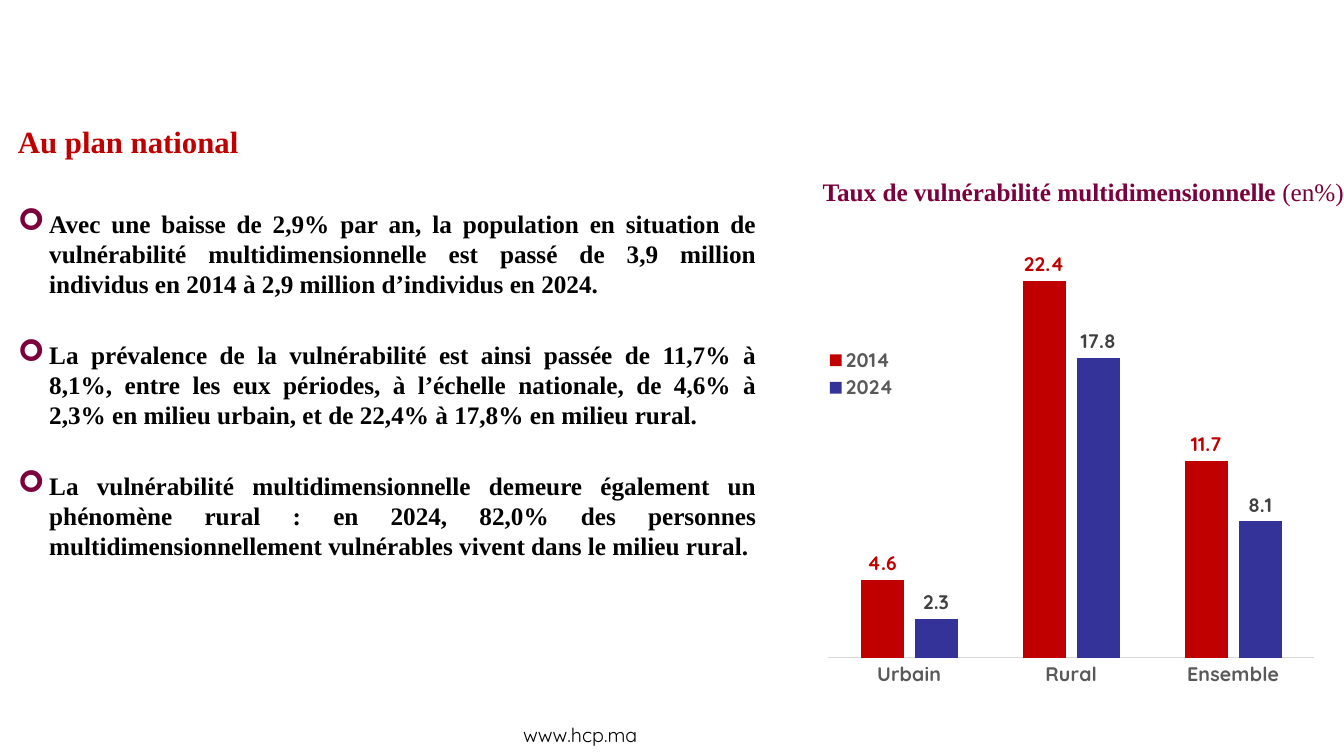
from dataclasses import dataclass

from lxml import etree
from pptx import Presentation
from pptx.chart.data import CategoryChartData
from pptx.dml.color import RGBColor
from pptx.enum.chart import XL_CHART_TYPE, XL_LABEL_POSITION, XL_LEGEND_POSITION, XL_TICK_MARK
from pptx.enum.text import MSO_ANCHOR, PP_ALIGN
from pptx.oxml.ns import qn
from pptx.util import Inches, Pt

COLUMNS = XL_CHART_TYPE.COLUMN_CLUSTERED
OUTSIDE_END = XL_LABEL_POSITION.OUTSIDE_END
LEGEND_TOP = XL_LEGEND_POSITION.TOP
NO_TICK = XL_TICK_MARK.NONE
JUSTIFY = PP_ALIGN.JUSTIFY
TOP, BOTTOM = MSO_ANCHOR.TOP, MSO_ANCHOR.BOTTOM

BLACK = RGBColor(0x00, 0x00, 0x00)
RED = RGBColor(0xC0, 0x00, 0x00)
BLUE = RGBColor(0x33, 0x33, 0x99)
PLUM = RGBColor(0x7B, 0x00, 0x3B)
GREY = RGBColor(0x59, 0x59, 0x59)
DARK_GREY = RGBColor(0x40, 0x40, 0x40)
LIGHT_GREY = RGBColor(0xD9, 0xD9, 0xD9)

SERIF = "Times New Roman"
SANS = "Quicksand"
BULLET_INDENT = Inches(0.31)


@dataclass(frozen=True)
class TextStyle:
    size: float
    color: RGBColor
    name: str = SERIF
    bold: bool = True


@dataclass(frozen=True)
class Box:
    left: float
    top: float
    width: float
    height: float


@dataclass(frozen=True)
class RateSeries:
    name: str
    values: tuple[float, ...]
    fill: RGBColor
    label: RGBColor


HEADING = TextStyle(22, RED)
FINDING = TextStyle(18, BLACK)
TITLE = TextStyle(18, PLUM)
TITLE_UNIT = TextStyle(18, PLUM, bold=False)
FOOTER = TextStyle(14, BLACK, SANS, False)
AXIS = TextStyle(14, GREY, SANS)

FINDINGS = (
    "Avec une baisse de 2,9% par an, la population en situation de vulnérabilité "
    "multidimensionnelle est passé de 3,9 million individus en 2014 à 2,9 million "
    "d’individus en 2024.",
    "La prévalence de la vulnérabilité est ainsi passée de 11,7% à 8,1%, entre les eux "
    "périodes, à l’échelle nationale, de 4,6% à 2,3% en milieu urbain, et de 22,4% à "
    "17,8% en milieu rural.",
    "La vulnérabilité multidimensionnelle demeure également un phénomène rural : en 2024, "
    "82,0% des personnes multidimensionnellement vulnérables vivent dans le milieu rural.",
)
AREAS = ("Urbain", "Rural", "Ensemble")
RATES = (
    RateSeries("2014", (4.6, 22.4, 11.7), RED, RED),
    RateSeries("2024", (2.3, 17.8, 8.1), BLUE, DARK_GREY),
)
PLOT_AREA = Box(0.03, 0.03, 0.94, 0.89)
LEGEND_AREA = Box(0.02, 0.26, 0.15, 0.12)


def set_font(font, style: TextStyle) -> None:
    formats = {"size": Pt(style.size), "name": style.name, "bold": style.bold}
    for attribute, value in formats.items():
        setattr(font, attribute, value)
    font.color.rgb = style.color


def add_run(paragraph, text: str, style: TextStyle) -> None:
    run = paragraph.add_run()
    run.text = text
    set_font(run.font, style)


def add_text_frame(slide, box: Box, anchor=TOP):
    shape = slide.shapes.add_textbox(
        Inches(box.left), Inches(box.top), Inches(box.width), Inches(box.height)
    )
    shape.text_frame.word_wrap = True
    shape.text_frame.vertical_anchor = anchor
    return shape.text_frame


def add_bullet(paragraph) -> None:
    properties = paragraph._p.get_or_add_pPr()
    properties.set("marL", str(BULLET_INDENT))
    properties.set("indent", str(-BULLET_INDENT))
    color = etree.SubElement(properties, qn("a:buClr"))
    etree.SubElement(color, qn("a:srgbClr"), val=str(PLUM))
    etree.SubElement(properties, qn("a:buSzPct"), val="120000")
    etree.SubElement(properties, qn("a:buFont"), typeface="Wingdings")
    etree.SubElement(properties, qn("a:buChar"), char="➢")


def add_findings(slide) -> None:
    frame = add_text_frame(slide, Box(0.08, 1.17, 7.52, 6.05))
    heading = frame.paragraphs[0]
    heading.alignment = JUSTIFY
    add_run(heading, "Au plan national", HEADING)
    for index, finding in enumerate(FINDINGS):
        paragraph = frame.add_paragraph()
        add_bullet(paragraph)
        paragraph.alignment = JUSTIFY
        paragraph.line_spacing = Pt(21.4)
        paragraph.space_before = Pt(29.3 if index else 35)
        add_run(paragraph, finding, FINDING)


def set_layout(element, area: Box, inner: bool = False) -> None:
    for old_layout in element.findall(qn("c:layout")):
        element.remove(old_layout)
    layout = etree.Element(qn("c:layout"))
    manual = etree.SubElement(layout, qn("c:manualLayout"))
    values = {"xMode": "edge", "yMode": "edge", "x": area.left, "y": area.top,
              "w": area.width, "h": area.height}
    if inner:
        values = {"layoutTarget": "inner", **values}
    for name, value in values.items():
        etree.SubElement(manual, qn(f"c:{name}"), val=str(value))
    position = element.find(qn("c:legendPos"))
    element.insert(0 if position is None else 1, layout)


def add_rate_chart(slide) -> None:
    data = CategoryChartData(number_format="0.0")
    data.categories = AREAS
    for rate in RATES:
        data.add_series(rate.name, rate.values)
    chart = slide.shapes.add_chart(
        COLUMNS, Inches(8.06), Inches(2.21), Inches(5.13), Inches(4.69), data
    ).chart
    set_font(chart.font, TextStyle(10, BLACK, SANS, False))
    chart.has_title = False
    chart.has_legend = True
    chart.legend.position = LEGEND_TOP
    chart.legend.include_in_layout = False
    set_font(chart.legend.font, AXIS)
    set_layout(chart.legend._element, LEGEND_AREA)
    set_layout(chart._chartSpace.chart.plotArea, PLOT_AREA, inner=True)

    category_axis, value_axis = chart.category_axis, chart.value_axis
    category_axis.major_tick_mark = NO_TICK
    category_axis.format.line.color.rgb = LIGHT_GREY
    category_axis.format.line.width = Pt(0.75)
    set_font(category_axis.tick_labels.font, AXIS)
    value_axis.visible = False
    value_axis.has_major_gridlines = False
    value_axis.minimum_scale = 0
    value_axis.maximum_scale = 25

    plot = chart.plots[0]
    plot.vary_by_categories = False
    plot.gap_width = 150
    plot.overlap = -25
    for series, rate in zip(plot.series, RATES):
        series.format.fill.solid()
        series.format.fill.fore_color.rgb = rate.fill
        labels = series.data_labels
        labels.show_value = True
        labels.position = OUTSIDE_END
        set_font(labels.font, TextStyle(14, rate.label, SANS))


def main() -> None:
    presentation = Presentation()
    presentation.slide_width = Inches(13.33)
    presentation.slide_height = Inches(7.5)
    slide = presentation.slides.add_slide(presentation.slide_layouts[6])
    footer = add_text_frame(slide, Box(5.09, 7.12, 3.15, 0.33))
    add_run(footer.paragraphs[0], "www.hcp.ma", FOOTER)
    title = add_text_frame(slide, Box(8.06, 1.55, 5.47, 0.55), BOTTOM).paragraphs[0]
    add_run(title, "Taux de vulnérabilité multidimensionnelle ", TITLE)
    add_run(title, "(en%)", TITLE_UNIT)
    add_findings(slide)
    add_rate_chart(slide)
    presentation.save("out.pptx")


if __name__ == "__main__":
    main()
